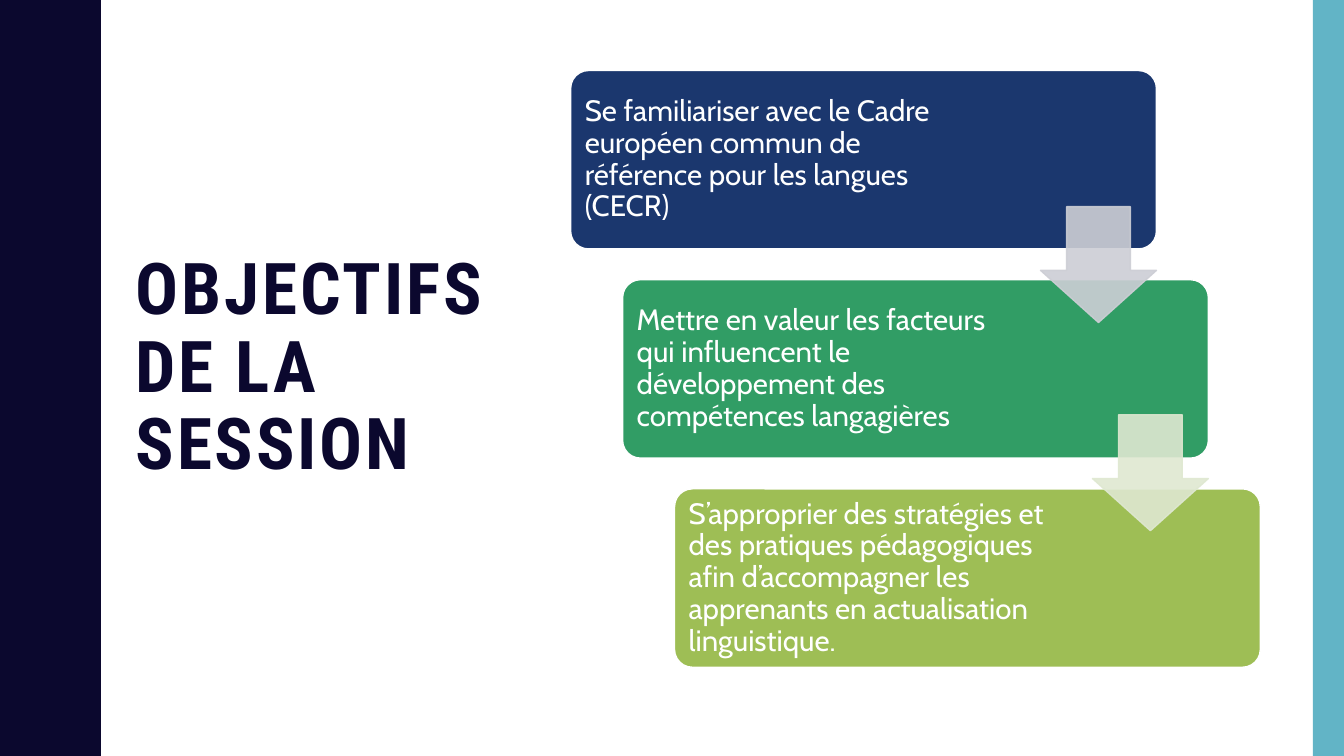
"""Build the session objectives slide with three descending steps."""
from dataclasses import dataclass

from lxml.etree import SubElement
from pptx import Presentation
from pptx.dml.color import RGBColor
from pptx.enum.shapes import MSO_SHAPE
from pptx.enum.text import MSO_ANCHOR
from pptx.oxml.ns import qn
from pptx.util import Inches, Pt

NAVY, TEAL, WHITE = "0B082E", "62B4C6", "FFFFFF"
STEP_LEFT, STEP_TOP, STEP_W, STEP_H = 5.66, 0.7, 5.81, 1.77
SHIFT_X, SHIFT_Y = 0.515, 2.075
ARROW_LEFT, ARROW_TOP, ARROW_SIZE = 10.32, 2.05, 1.15
SLIDE_W, SLIDE_H, WAVE_PERIOD = 13.33, 7.5, 1.5
HALF_WAVE = [
    (0.78, 0), (0.78, 0.07), (0.79, 0.14), (0.8, 0.2), (0.81, 0.25),
    (0.83, 0.29), (0.85, 0.33), (0.87, 0.38), (0.89, 0.42), (0.91, 0.46),
    (0.93, 0.5), (0.95, 0.55), (0.96, 0.61), (0.97, 0.68), (0.97, 0.75),
]


@dataclass
class Step:
    text: str
    color: str
    text_width: float


STEPS = [
    Step("Se familiariser avec le Cadre européen commun de référence "
         "pour les langues (CECR)", "1B376E", 3.9),
    Step("Mettre en valeur les facteurs qui influencent le développement "
         "des compétences langagières", "319D65", 4.04),
    Step("S’approprier des stratégies et des pratiques pédagogiques afin "
         "d’accompagner les apprenants en actualisation linguistique.",
         "9EBE55", 4.04),
]
ARROW_COLORS = ["CDCED5", "DFE8D1"]


def rgb(color: str) -> RGBColor:
    return RGBColor.from_string(color)


def paint(sp, color: str, line: str | None = None) -> None:
    sp.shadow.inherit = False
    sp.fill.solid()
    sp.fill.fore_color.rgb = rgb(color)
    if line:
        sp.line.color.rgb = rgb(line)
        sp.line.width = Pt(1)
    else:
        sp.line.fill.background()


def add_shape(s, kind, left: float, top: float, width: float, height: float):
    return s.shapes.add_shape(kind, Inches(left), Inches(top),
                              Inches(width), Inches(height))


def add_text(s, left: float, top: float, width: float, height: float,
             text: str, font: str, size: float, color: str, inset: float):
    sp = s.shapes.add_textbox(Inches(left), Inches(top),
                              Inches(width), Inches(height))
    tf = sp.text_frame
    tf.word_wrap = True
    tf.vertical_anchor = MSO_ANCHOR.MIDDLE
    tf.margin_left = tf.margin_right = Inches(inset)
    tf.margin_top = tf.margin_bottom = Inches(inset)
    p = tf.paragraphs[0]
    p.text = text
    p.line_spacing = 0.9
    p.font.name = font
    p.font.size = Pt(size)
    p.font.color.rgb = rgb(color)
    return p


def add_wave(s) -> None:
    period = HALF_WAVE + [(x, WAVE_PERIOD - y) for x, y in HALF_WAVE[-2::-1]]
    edge = [(x, y + i * WAVE_PERIOD)
            for i in range(int(SLIDE_H / WAVE_PERIOD)) for x, y in period]
    fb = s.shapes.build_freeform(0, 0, scale=Inches(1))
    fb.add_line_segments(edge + [(0, SLIDE_H)], close=True)
    paint(fb.convert_to_shape(), NAVY)


def add_step(s, step: Step, index: int) -> None:
    left, top = STEP_LEFT + index * SHIFT_X, STEP_TOP + index * SHIFT_Y
    sp = add_shape(s, MSO_SHAPE.ROUNDED_RECTANGLE, left, top, STEP_W, STEP_H)
    sp.adjustments[0] = 0.1
    paint(sp, step.color, WHITE)
    add_text(s, left + 0.05, top + 0.05, step.text_width, STEP_H - 0.1,
             step.text, "Cabin", 21, WHITE, 0.09)


def add_arrow(s, color: str, index: int) -> None:
    sp = add_shape(s, MSO_SHAPE.DOWN_ARROW, ARROW_LEFT + index * SHIFT_X,
                   ARROW_TOP + index * (SHIFT_Y - 0.01), ARROW_SIZE, ARROW_SIZE)
    sp.adjustments[0], sp.adjustments[1] = 0.55, 0.45
    paint(sp, color, color)
    for clr in sp._element.spPr.iter(qn("a:srgbClr")):
        SubElement(clr, qn("a:alpha"), val="90000")


def main() -> None:
    prs = Presentation()
    prs.slide_width, prs.slide_height = Inches(SLIDE_W), Inches(SLIDE_H)
    s = prs.slides.add_slide(prs.slide_layouts[6])
    add_wave(s)
    paint(add_shape(s, MSO_SHAPE.RECTANGLE, 13.02, 0, 0.31, SLIDE_H), TEAL)
    p = add_text(s, 1.25, 0.7, 4.33, 5.92, "OBJECTIFS DE LA SESSION",
                 "Roboto Condensed", 51, NAVY, 0.1)
    p.font.bold = True
    p.runs[0].font._element.set("spc", "200")
    for i, step in enumerate(STEPS):
        add_step(s, step, i)
    for i, color in enumerate(ARROW_COLORS):
        add_arrow(s, color, i)
    prs.save("out.pptx")


if __name__ == "__main__":
    main()
